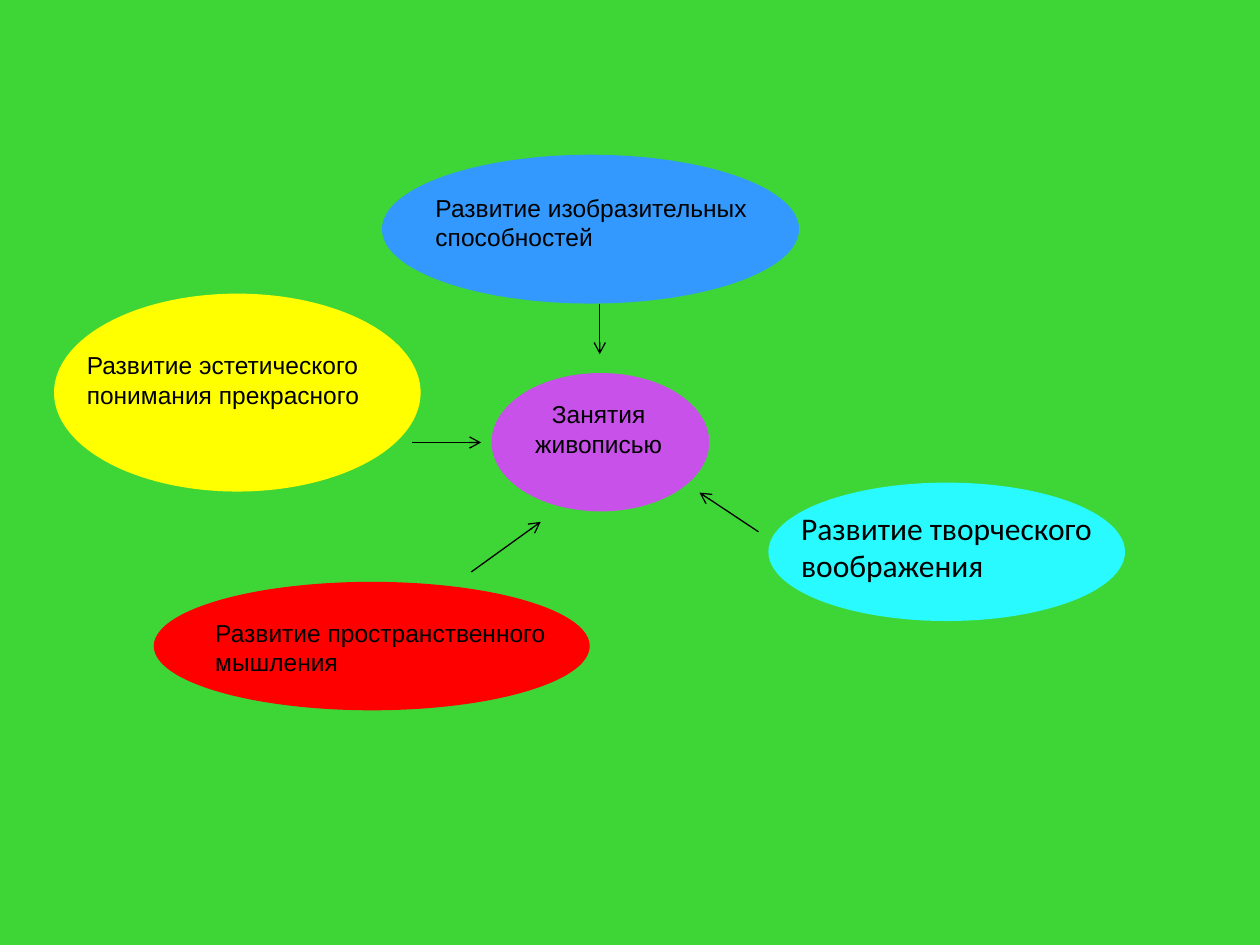
"""Build a slide on what painting lessons develop."""
from pptx import Presentation
from pptx.dml.color import RGBColor as Rgb
from pptx.enum.shapes import MSO_CONNECTOR as Link, MSO_SHAPE as Form
from pptx.enum.text import MSO_ANCHOR as Anchor, MSO_AUTO_SIZE as Fit, PP_ALIGN as Align
from pptx.oxml.ns import qn
from pptx.util import Cm, Pt
from lxml.etree import SubElement

THEME = {
    "back": "3ED636", "ink": "000000", "line": 0.75,
    "blue": "3399FF", "violet": "C851E9", "cyan": "29FAFF",
    "red": "FE0000", "yellow": "FFFF00",
    "label": ("Arial", 14), "large": ("Calibri", 18),
}
WIDTH, HEIGHT = 25.4, 19.05

OVALS = [
    ("blue", (7.7, 3.12, 8.41, 3)),
    ("violet", (9.91, 7.52, 4.39, 2.79)),
    ("cyan", (15.49, 9.73, 7.19, 2.79)),
    ("red", (3.1, 11.73, 8.79, 2.59)),
    ("yellow", (1.09, 5.92, 7.39, 3.99)),
]
LABELS = [
    (["Занятия", "живописью"], (10.52, 7.92, 3.1, 1.45), "label", Align.CENTER, Anchor.MIDDLE, False),
    (["Развитие изобразительных", "способностей"], (8.53, 3.76, 6.96, 1.45), "label", Align.LEFT, Anchor.MIDDLE, False),
    (["Развитие эстетического", "понимания прекрасного"], (1.5, 6.93, 7.14, 1.45), "label", Align.LEFT, Anchor.MIDDLE, True),
    (["Развитие пространственного", "мышления"], (4.09, 12.32, 7.21, 1.45), "label", Align.LEFT, Anchor.MIDDLE, False),
    (["Развитие творческого воображения"], (15.9, 10.13, 6.55, 1.8), "large", Align.LEFT, Anchor.TOP, True),
]
ARROWS = [
    (8.31, 8.92, 9.7, 8.92),
    (12.09, 6.12, 12.09, 7.14),
    (15.29, 10.72, 14.1, 9.93),
    (9.5, 11.53, 10.9, 10.52),
]


def color(name):
    """Return a theme colour."""
    return Rgb.from_string(THEME[name])


def add_form(slide, form, name, box):
    """Add a plain filled shape."""
    shape = slide.shapes.add_shape(form, *map(Cm, box))
    shape.shadow.inherit = False
    shape.fill.solid()
    shape.fill.fore_color.rgb = color(name)
    shape.line.fill.background()


def add_label(slide, lines, box, style, align, anchor, wrap):
    """Add a text box with one paragraph per line."""
    frame = slide.shapes.add_textbox(*map(Cm, box)).text_frame
    frame.word_wrap = wrap
    frame.auto_size = Fit.SHAPE_TO_FIT_TEXT
    frame.vertical_anchor = anchor
    frame.text = "\n".join(lines)
    face, size = THEME[style]
    for para in frame.paragraphs:
        para.alignment = align
        para.font.name = face
        para.font.size = Pt(size)
        para.font.color.rgb = color("ink")


def add_arrow(slide, ends):
    """Add a thin line with an open arrowhead."""
    arrow = slide.shapes.add_connector(Link.STRAIGHT, *map(Cm, ends))
    arrow.line.width = Pt(THEME["line"])
    arrow.line.color.rgb = color("ink")
    SubElement(arrow.line._get_or_add_ln(), qn("a:tailEnd"), type="arrow")
    SubElement(arrow._element.spPr, qn("a:effectLst"))


def main():
    """Draw the slide and save it."""
    deck = Presentation()
    deck.slide_width, deck.slide_height = Cm(WIDTH), Cm(HEIGHT)
    slide = deck.slides.add_slide(deck.slide_layouts[6])
    add_form(slide, Form.RECTANGLE, "back", (0, 0, WIDTH, HEIGHT))
    for name, box in OVALS:
        add_form(slide, Form.OVAL, name, box)
    for label in LABELS:
        add_label(slide, *label)
    for ends in ARROWS:
        add_arrow(slide, ends)
    deck.save("out.pptx")


if __name__ == "__main__":
    main()
